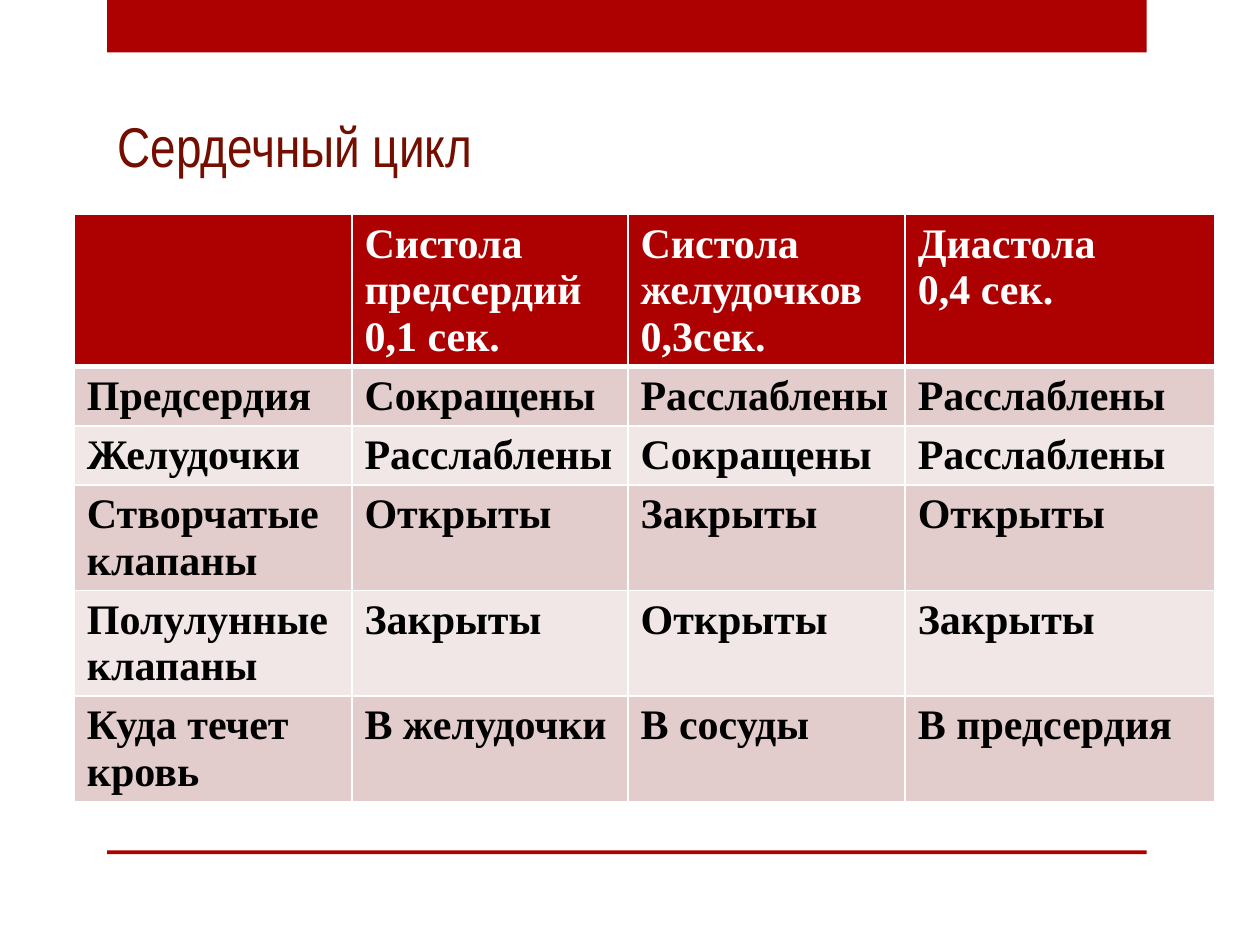
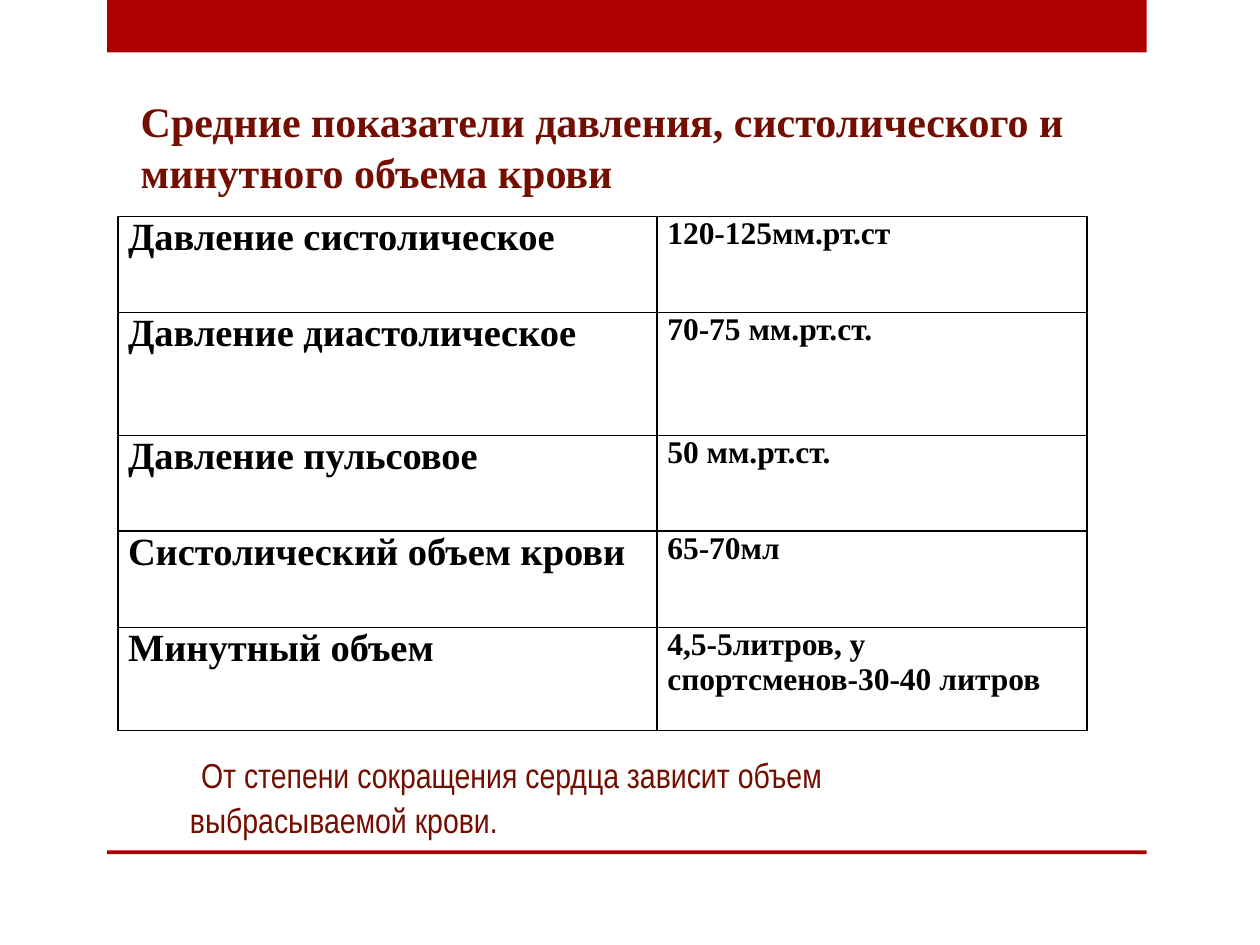
from lxml import etree
from pptx import Presentation
from pptx.dml.color import RGBColor
from pptx.enum.shapes import MSO_SHAPE
from pptx.enum.text import MSO_ANCHOR
from pptx.oxml.ns import qn
from pptx.util import Pt

RECTANGLE = MSO_SHAPE.RECTANGLE
TOP = MSO_ANCHOR.TOP
BOTTOM = MSO_ANCHOR.BOTTOM

RED = "AD0101"
DARK_RED = "730E00"
WHITE = "FFFFFF"
BLACK = "000000"
ROW_FILLS = ["E3CCCC", "F1E7E7"]
NARROW = "Arial Narrow"
SERIF = "Times New Roman"

CYCLE_ROWS = [
    ["", "Систола предсердий 0,1 сек.", "Систола желудочков 0,3сек.", "Диастола\n0,4 сек."],
    ["Предсердия", "Сокращены", "Расслаблены", "Расслаблены"],
    ["Желудочки", "Расслаблены", "Сокращены", "Расслаблены"],
    ["Створчатые клапаны", "Открыты", "Закрыты", "Открыты"],
    ["Полулунные клапаны", "Закрыты", "Открыты", "Закрыты"],
    ["Куда течет кровь", "В желудочки", "В сосуды", "В предсердия"],
]
CYCLE_LINE_COUNTS = [3, 1, 1, 2, 2, 2]
CYCLE_LINE_HEIGHT = 26.55

INDICATOR_ROWS = [
    ["Давление систолическое", "120-125мм.рт.ст"],
    ["Давление диастолическое", "70-75 мм.рт.ст."],
    ["Давление пульсовое", "50 мм.рт.ст."],
    ["Систолический объем крови", "65-70мл"],
    ["Минутный объем", "4,5-5литров, у\nспортсменов-30-40 литров"],
]


def color(value):
    return RGBColor.from_string(value)


class Deck:
    """Holds the shared style and the slide being built."""

    def __init__(self):
        self.presentation = Presentation()
        self.presentation.slide_width = Pt(720)
        self.presentation.slide_height = Pt(540)
        self.slide = None

    def add_slide(self):
        self.slide = self.presentation.slides.add_slide(self.presentation.slide_layouts[6])
        self.band(0, 30)
        self.band(486, 2.16)

    def band(self, top, height):
        shape = self.slide.shapes.add_shape(RECTANGLE, Pt(61.2), Pt(top), Pt(594), Pt(height))
        shape.shadow.inherit = False
        shape.fill.solid()
        shape.fill.fore_color.rgb = color(RED)
        shape.line.fill.background()

    def run(self, paragraph, text, size, font, text_color, bold=False):
        run = paragraph.add_run()
        run.text = text
        run.font.size = Pt(size)
        run.font.name = font
        run.font.bold = bold
        run.font.color.rgb = color(text_color)

    def text(self, box, lines, size, font, bold=False, anchor=TOP, spacing=None, indent=0):
        shape = self.slide.shapes.add_textbox(*map(Pt, box))
        frame = shape.text_frame
        frame.word_wrap = True
        frame.vertical_anchor = anchor
        paragraph = frame.paragraphs[0]
        paragraph.line_spacing = spacing
        if indent:
            paragraph._p.get_or_add_pPr().set("indent", str(Pt(indent)))
        for index, line in enumerate(lines):
            if index:
                paragraph.add_line_break()
            self.run(paragraph, line, size, font, DARK_RED, bold)

    def table(self, left, top, widths, heights):
        frame = self.slide.shapes.add_table(
            len(heights), len(widths), Pt(left), Pt(top), Pt(sum(widths)), Pt(sum(heights)))
        table = frame.table
        table.first_row = False
        table.horz_banding = False
        for column, width in zip(table.columns, widths):
            column.width = Pt(width)
        for row, height in zip(table.rows, heights):
            row.height = Pt(height)
        return table

    def cell(self, cell, text, size, text_color, fill=None, spacing=None):
        if fill:
            cell.fill.solid()
            cell.fill.fore_color.rgb = color(fill)
        else:
            cell.fill.background()
        for index, line in enumerate(text.split("\n") if text else []):
            frame = cell.text_frame
            paragraph = frame.add_paragraph() if index else frame.paragraphs[0]
            paragraph.line_spacing = spacing
            self.run(paragraph, line, size, SERIF, text_color, True)

    def borders(self, cell, line_color, top=1, bottom=1):
        properties = cell._tc.get_or_add_tcPr()
        sides = {"lnL": 1, "lnR": 1, "lnT": top, "lnB": bottom}
        for index, (side, width) in enumerate(sides.items()):
            line = etree.Element(qn(f"a:{side}"), w=str(Pt(width)))
            fill = etree.SubElement(line, qn("a:solidFill"))
            etree.SubElement(fill, qn("a:srgbClr"), val=line_color)
            properties.insert(index, line)


def add_cycle_slide(deck):
    deck.add_slide()
    deck.text((60.2, 43.2, 534.24, 62.64), ["Сердечный цикл"], 32, NARROW, anchor=BOTTOM)
    heights = [7.25 + CYCLE_LINE_HEIGHT * count for count in CYCLE_LINE_COUNTS]
    table = deck.table(42.5, 122.6, [158.6, 157.8, 158.4, 177.12], heights)
    for row, texts in enumerate(CYCLE_ROWS):
        fill = ROW_FILLS[(row - 1) % 2] if row else RED
        for column, text in enumerate(texts):
            cell = table.cell(row, column)
            deck.cell(cell, text, 24, BLACK if row else WHITE, fill, Pt(CYCLE_LINE_HEIGHT))
            deck.borders(cell, WHITE, top=3 if row == 1 else 1, bottom=1 if row else 3)


def add_indicators_slide(deck):
    deck.add_slide()
    table = deck.table(67.4, 123.84, [308.16, 245.52], [54.72, 70.3, 54.72, 54.9, 59.04])
    for row, texts in enumerate(INDICATOR_ROWS):
        for column, (text, size) in enumerate(zip(texts, [22, 18])):
            cell = table.cell(row, column)
            cell.margin_left = cell.margin_right = Pt(5.76)
            cell.margin_top = cell.margin_bottom = 0
            deck.cell(cell, text, size, BLACK)
            deck.borders(cell, BLACK)
    deck.text((101.52, 427.68, 444.24, 56.16),
              ["От степени сокращения сердца зависит объем", "выбрасываемой крови."],
              19.8, NARROW, anchor=BOTTOM, spacing=Pt(25.5), indent=6.3)
    deck.text((73.3, 50.4, 579.6, 65.52),
              ["Средние показатели давления, систолического и минутного объема крови"],
              24, SERIF, bold=True, spacing=Pt(29.2))


def main():
    deck = Deck()
    add_cycle_slide(deck)
    add_indicators_slide(deck)
    deck.presentation.save("out.pptx")


if __name__ == "__main__":
    main()
